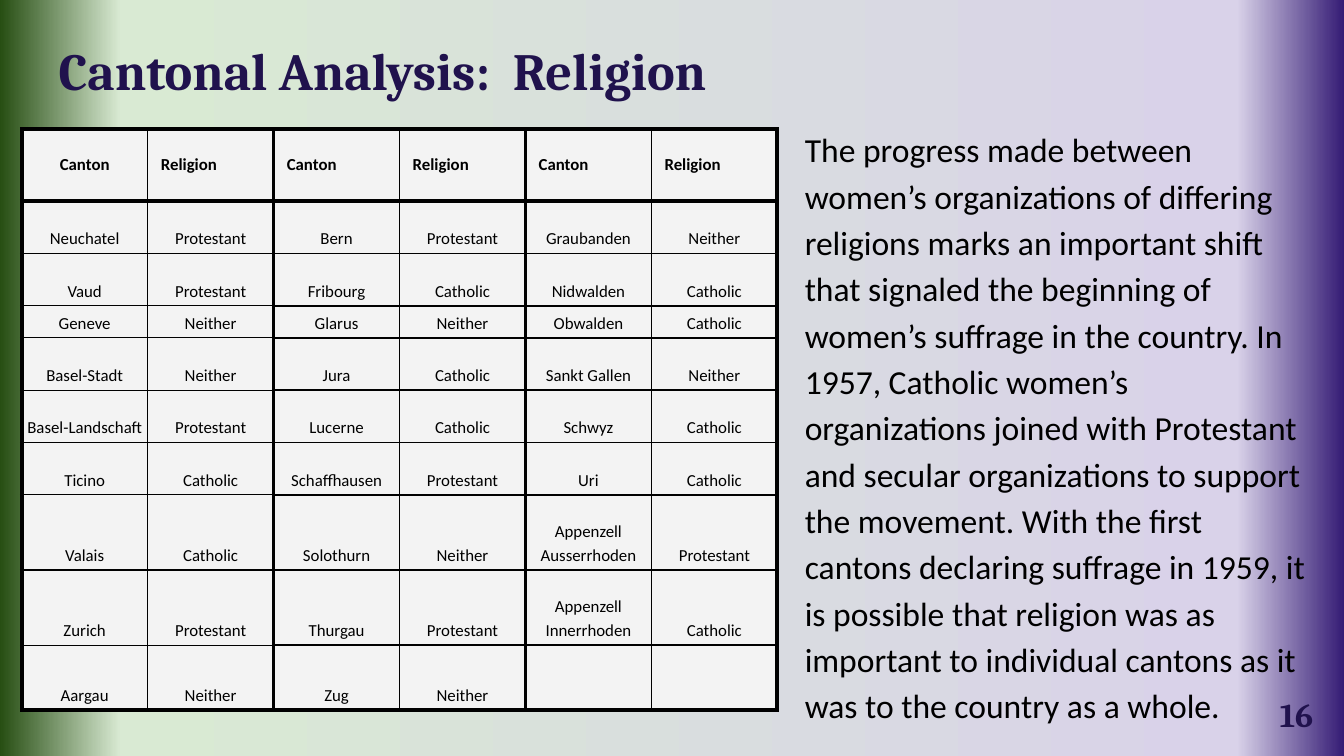
from copy import deepcopy
from dataclasses import dataclass, field
from typing import Any

from lxml.etree import SubElement
from pptx import Presentation
from pptx.dml.color import RGBColor
from pptx.enum.text import MSO_ANCHOR, PP_ALIGN
from pptx.oxml.ns import qn
from pptx.util import Cm, Pt

BLACK = RGBColor(0x00, 0x00, 0x00)
NAVY = RGBColor(0x20, 0x12, 0x4D)
GREY = RGBColor(0xF3, 0xF3, 0xF3)
FADE = [
    (0, RGBColor(0x27, 0x4E, 0x13)),
    (0.09, RGBColor(0xD9, 0xEA, 0xD3)),
    (0.92, RGBColor(0xD9, 0xD2, 0xE9)),
    (1, RGBColor(0x35, 0x1C, 0x75)),
]
SIDES = ("margin_left", "margin_top", "margin_right", "margin_bottom")
WIDE = dict.fromkeys(SIDES, Cm(0.25))
TIGHT = dict.fromkeys(SIDES, Cm(0.08))

HEADS = ["Canton", "Religion"] * 3
CANTONS = [
    ["Neuchatel", "Protestant", "Bern", "Protestant", "Graubanden", "Neither"],
    ["Vaud", "Protestant", "Fribourg", "Catholic", "Nidwalden", "Catholic"],
    ["Geneve", "Neither", "Glarus", "Neither", "Obwalden", "Catholic"],
    ["Basel-Stadt", "Neither", "Jura", "Catholic", "Sankt Gallen", "Neither"],
    ["Basel-Landschaft", "Protestant", "Lucerne", "Catholic", "Schwyz", "Catholic"],
    ["Ticino", "Catholic", "Schaffhausen", "Protestant", "Uri", "Catholic"],
    ["Valais", "Catholic", "Solothurn", "Neither", "Appenzell Ausserrhoden", "Protestant"],
    ["Zurich", "Protestant", "Thurgau", "Protestant", "Appenzell Innerrhoden", "Catholic"],
    ["Aargau", "Neither", "Zug", "Neither", "", ""],
]
HEIGHTS = [1.36, 0.99, 0.99, 0.58, 0.99, 0.99, 0.99, 1.42, 1.42, 1.23]
WIDTH = 2.38
THICK = 2.25
STORY = (
    "The progress made between women’s organizations of differing religions marks "
    "an important shift that signaled the beginning of women’s suffrage in the "
    "country. In 1957, Catholic women’s organizations joined with Protestant and "
    "secular organizations to support the movement. With the first cantons "
    "declaring suffrage in 1959, it is possible that religion was as important to "
    "individual cantons as it was to the country as a whole."
)


@dataclass
class Style:
    name: str
    size: float
    color: RGBColor = BLACK
    bold: bool = False
    para: dict[str, Any] = field(default_factory=dict)


@dataclass
class Label:
    text: str
    left: float
    top: float
    width: float
    height: float
    style: Style
    anchor: MSO_ANCHOR = MSO_ANCHOR.TOP


HEAD = Style("Calibri", 9, bold=True)
FIRST = Style("Calibri", 9, bold=True, para={"alignment": PP_ALIGN.CENTER})
ENTRY = Style("Calibri", 9, para={"alignment": PP_ALIGN.CENTER, "line_spacing": 1.15})
TITLE = Style("Cambria", 28, NAVY, True)
BODY = Style("Calibri", 18, para={"line_spacing": 1.15})
PAGE = Style("Cambria", 18, NAVY, True, {"alignment": PP_ALIGN.RIGHT})

LABELS = [
    Label("Cantonal Analysis:  Religion", 0.86, 0.48, 23.67, 1.6, TITLE),
    Label(STORY, 14.96, 2.08, 10.11, 9.5, BODY),
    Label("16", 23.55, 12.95, 1.52, 1.09, PAGE, MSO_ANCHOR.MIDDLE),
]


def apply(target: Any, values: dict[str, Any]) -> None:
    for key, value in values.items():
        setattr(target, key, value)


def write(frame: Any, text: str, style: Style) -> None:
    para = frame.paragraphs[0]
    apply(para, style.para)
    apply(para.font, {"name": style.name, "size": Pt(style.size), "bold": style.bold})
    para.font.color.rgb = style.color
    if text:
        run = para.add_run()
        run.text = text
        apply(run.font, {"name": style.name, "size": Pt(style.size), "bold": style.bold})
        run.font.color.rgb = style.color


def paint(slide: Any) -> None:
    fill = slide.background.fill
    fill.gradient()
    fill.gradient_angle = 0
    stops = slide.element.find(".//" + qn("a:gsLst"))
    while len(stops) < len(FADE):
        stops.append(deepcopy(stops[0]))
    for stop, (place, color) in zip(fill.gradient_stops, FADE):
        stop.position = place
        stop.color.rgb = color


def label(slide: Any, item: Label) -> None:
    place = (item.left, item.top, item.width, item.height)
    frame = slide.shapes.add_textbox(*map(Cm, place)).text_frame
    apply(frame, WIDE | {"word_wrap": True, "vertical_anchor": item.anchor})
    write(frame, item.text, item.style)


def border(cell: Any, widths: dict[str, float]) -> None:
    props = cell._tc.get_or_add_tcPr()
    for index, (side, width) in enumerate(widths.items()):
        line = SubElement(props, qn(f"a:ln{side}"), w=str(Pt(width)))
        ink = SubElement(line, qn("a:solidFill"))
        SubElement(ink, qn("a:srgbClr"), val=str(BLACK))
        props.insert(index, line)


def grid(slide: Any) -> None:
    rows = [HEADS, *CANTONS]
    last = len(rows) - 1
    size = (WIDTH * len(HEADS), sum(HEIGHTS))
    shape = slide.shapes.add_table(len(rows), len(HEADS), Cm(0.41), Cm(2.44), *map(Cm, size))
    table = shape.table
    apply(table, {"first_row": False, "horz_banding": False})
    for column in table.columns:
        column.width = Cm(WIDTH)
    for y, texts in enumerate(rows):
        table.rows[y].height = Cm(HEIGHTS[y])
        for x, text in enumerate(texts):
            cell = table.cell(y, x)
            head = y == 0
            style = (HEAD if x else FIRST) if head else ENTRY
            anchor = MSO_ANCHOR.MIDDLE if head else MSO_ANCHOR.BOTTOM
            pad = WIDE if head and x else TIGHT
            apply(cell, pad | {"vertical_anchor": anchor})
            write(cell.text_frame, text, style)
            cell.fill.solid()
            cell.fill.fore_color.rgb = GREY
            thin = 0.75 if x < 2 else 1
            border(cell, {
                "L": thin if x % 2 else THICK,
                "R": THICK if x % 2 else thin,
                "T": THICK if y < 2 else thin,
                "B": THICK if y in (0, last) else thin,
            })


def main() -> None:
    deck = Presentation()
    apply(deck, {"slide_width": Cm(25.4), "slide_height": Cm(14.29)})
    slide = deck.slides.add_slide(deck.slide_layouts[6])
    paint(slide)
    grid(slide)
    for item in LABELS:
        label(slide, item)
    deck.save("out.pptx")


if __name__ == "__main__":
    main()
